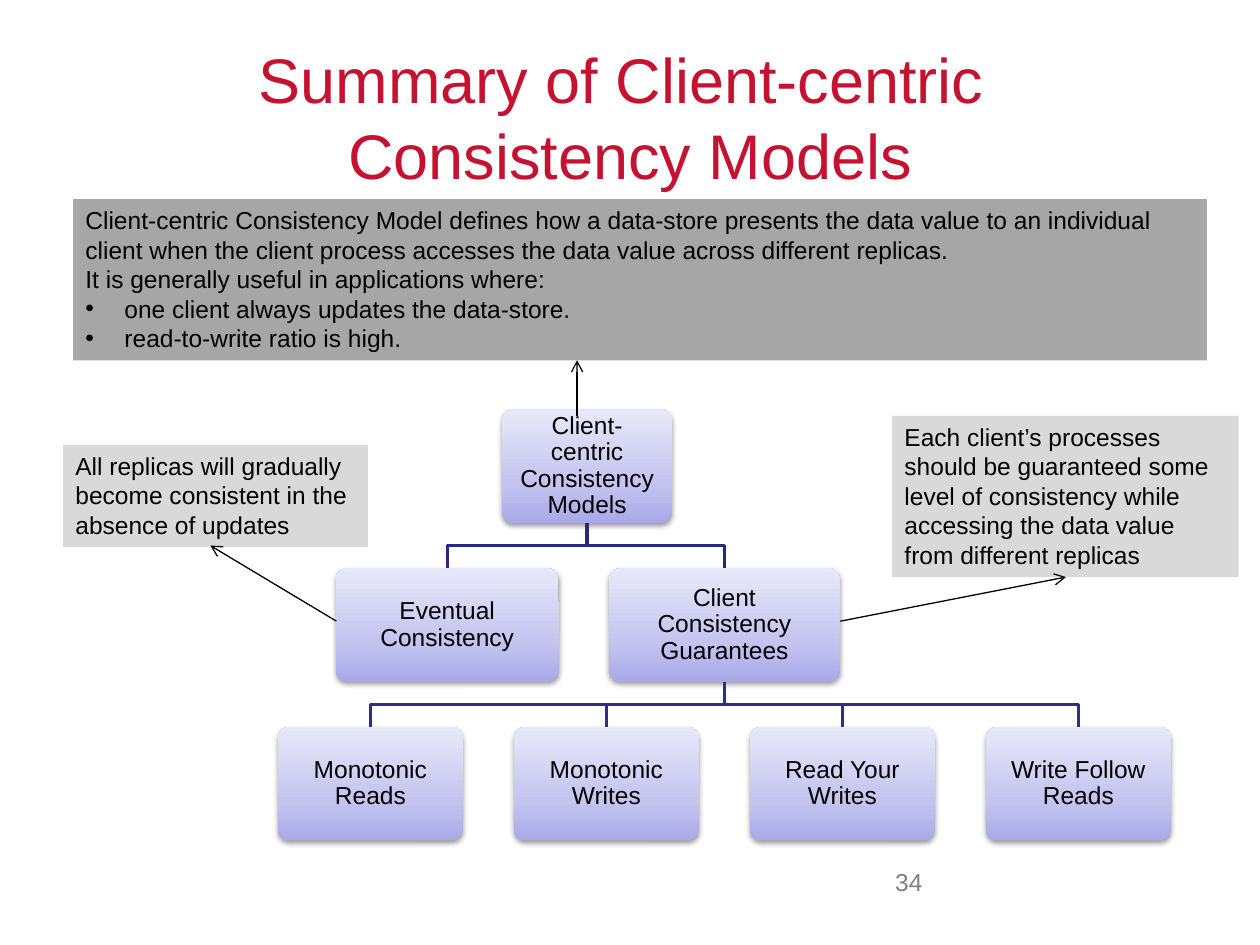
from dataclasses import dataclass

from pptx import Presentation
from pptx.dml.color import RGBColor
from pptx.enum.shapes import MSO_CONNECTOR, MSO_SHAPE
from pptx.enum.text import MSO_ANCHOR, MSO_AUTO_SIZE, PP_ALIGN
from pptx.oxml import parse_xml
from pptx.oxml.ns import nsdecls
from pptx.util import Inches, Pt

LEFT, CENTER, RIGHT = PP_ALIGN.LEFT, PP_ALIGN.CENTER, PP_ALIGN.RIGHT
TOP, MIDDLE = MSO_ANCHOR.TOP, MSO_ANCHOR.MIDDLE
GROW = MSO_AUTO_SIZE.SHAPE_TO_FIT_TEXT
RECTANGLE, ROUNDED = MSO_SHAPE.RECTANGLE, MSO_SHAPE.ROUNDED_RECTANGLE
STRAIGHT = MSO_CONNECTOR.STRAIGHT
COLUMNS, ROWS = 100, 75
BULLET_INDENT = Inches(0.31)


@dataclass(frozen=True)
class Theme:
    font: str = "Arial"
    title_size: int = 36
    body_size: int = 14
    title: str = "C41230"
    text: str = "000000"
    number: str = "808080"
    definition: str = "A6A6A6"
    callout: str = "D9D9D9"
    upper_branch: str = "29297B"
    lower_branch: str = "2E2E8B"
    gradient: tuple = ((0, "A9A9E9"), (35, "C4C4EF"), (100, "E8E8FA"))
    branch_width: float = 2
    arrow_width: float = 0.75


THEME = Theme()


def write_text(frame, text, size=THEME.body_size, color=THEME.text, align=LEFT,
               anchor=TOP, spacing=None, inset=None, bullets_from=None):
    frame.word_wrap = True
    frame.vertical_anchor = anchor
    if inset is not None:
        frame.margin_left = frame.margin_right = Inches(inset)
        frame.margin_top = frame.margin_bottom = Inches(inset)
    frame.text = text
    for index, paragraph in enumerate(frame.paragraphs):
        paragraph.alignment = align
        paragraph.line_spacing = spacing
        if bullets_from is not None and index >= bullets_from:
            properties = paragraph._p.get_or_add_pPr()
            properties.set("marL", str(BULLET_INDENT))
            properties.set("indent", str(-BULLET_INDENT))
            properties.append(parse_xml(f'<a:buFont {nsdecls("a")} typeface="{THEME.font}"/>'))
            properties.append(parse_xml(f'<a:buChar {nsdecls("a")} char="•"/>'))
        for run in paragraph.runs:
            run.font.name = THEME.font
            run.font.size = Pt(size)
            run.font.color.rgb = RGBColor.from_string(color)


class SlideBuilder:
    def __init__(self, presentation, theme):
        self.theme = theme
        self.column = presentation.slide_width / COLUMNS
        self.row = presentation.slide_height / ROWS
        self.slide = presentation.slides.add_slide(presentation.slide_layouts[6])
        self.shapes = self.slide.shapes

    def place(self, left, top, width, height):
        return (round(left * self.column), round(top * self.row),
                round(width * self.column), round(height * self.row))

    def label(self, text, area, **text_format):
        box = self.shapes.add_textbox(*self.place(*area))
        write_text(box.text_frame, text, **text_format)

    def panel(self, text, area, color, **text_format):
        shape = self.shapes.add_shape(RECTANGLE, *self.place(*area))
        shape.shadow.inherit = False
        shape.fill.solid()
        shape.fill.fore_color.rgb = RGBColor.from_string(color)
        shape.line.fill.background()
        write_text(shape.text_frame, text, **text_format)
        shape.text_frame.auto_size = GROW

    def node(self, text, center, width, level):
        area = self.place(center - width / 2, 32.5 + 12.6 * level, width, 9)
        shape = self.shapes.add_shape(ROUNDED, *area)
        shape.adjustments[0] = 0.1
        stops = "".join(
            f'<a:gs pos="{position * 1000}"><a:srgbClr val="{color}"/></a:gs>'
            for position, color in self.theme.gradient)
        properties = shape._element.spPr
        properties.append(parse_xml(
            f'<a:gradFill {nsdecls("a")} rotWithShape="1"><a:gsLst>{stops}</a:gsLst>'
            '<a:lin ang="16200000" scaled="0"/></a:gradFill>'))
        shape.line.fill.background()
        properties.append(parse_xml(
            f'<a:effectLst {nsdecls("a")}>'
            '<a:outerShdw blurRad="40000" dist="20000" dir="5400000" rotWithShape="0">'
            '<a:srgbClr val="000000"><a:alpha val="38000"/></a:srgbClr>'
            '</a:outerShdw></a:effectLst>'))
        write_text(shape.text_frame, text, align=CENTER, anchor=MIDDLE, spacing=0.9, inset=0.09)
        return shape

    def branch(self, parent, child, color):
        start_x = parent.left + parent.width // 2
        start_y = parent.top + parent.height
        end_x = child.left + child.width // 2
        middle_y = (start_y + child.top) // 2
        builder = self.shapes.build_freeform(start_x, start_y)
        builder.add_line_segments(
            [(start_x, middle_y), (end_x, middle_y), (end_x, child.top)], close=False)
        shape = builder.convert_to_shape()
        shape.shadow.inherit = False
        shape.fill.background()
        shape.line.color.rgb = RGBColor.from_string(color)
        shape.line.width = Pt(self.theme.branch_width)

    def arrow(self, start, end):
        connector = self.shapes.add_connector(STRAIGHT, *self.place(*start, *end))
        connector.line.color.rgb = RGBColor.from_string(self.theme.text)
        connector.line.width = Pt(self.theme.arrow_width)
        connector.line._get_or_add_ln().append(
            parse_xml(f'<a:tailEnd {nsdecls("a")} type="arrow"/>'))
        connector._element.spPr.append(parse_xml(f'<a:effectLst {nsdecls("a")}/>'))


def main():
    presentation = Presentation()
    presentation.slide_width = Inches(10)
    presentation.slide_height = Inches(7.5)
    builder = SlideBuilder(presentation, THEME)

    builder.label("Summary of Client-centric \vConsistency Models", (5, 3, 90, 12.5),
                  size=THEME.title_size, color=THEME.title, align=CENTER, anchor=MIDDLE)
    builder.label("34", (65, 68.3, 9.2, 5.2), color=THEME.number, align=RIGHT)

    root = builder.node("Client-centric Consistency Models", 46.6, 13.5, 0)
    eventual = builder.node("Eventual Consistency", 35.5, 17.7, 1)
    guarantees = builder.node("Client Consistency Guarantees", 57.5, 18.3, 1)
    for child in (eventual, guarantees):
        builder.branch(root, child, THEME.upper_branch)
    models = ("Monotonic Reads", "Monotonic Writes", "Read Your Writes", "Write Follow Reads")
    for index, model in enumerate(models):
        child = builder.node(model, 29.4 + 18.73 * index, 14.7, 2)
        builder.branch(guarantees, child, THEME.lower_branch)

    builder.panel(
        "Each client’s processes should be guaranteed some level of consistency "
        "while accessing the data value from different replicas",
        (70.8, 33, 27.5, 12.8), THEME.callout)
    builder.arrow((66.7, 49.3), (84.6, 45.8))
    builder.panel(
        "All replicas will gradually become consistent in the absence of updates",
        (5, 35.3, 24.2, 8.1), THEME.callout)
    builder.arrow((26.7, 49.3), (16.7, 43.3))
    definition = (
        "Client-centric Consistency Model defines how a data-store presents the data value "
        "to an individual client when the client process accesses the data value across "
        "different replicas.",
        "It is generally useful in applications where:",
        "one client always updates the data-store.",
        "read-to-write ratio is high.",
    )
    builder.panel("\n".join(definition), (5.8, 15.8, 90, 12.8), THEME.definition, bullets_from=2)
    builder.arrow((45.8, 33), (45.8, 28.6))

    presentation.save("out.pptx")


if __name__ == "__main__":
    main()
